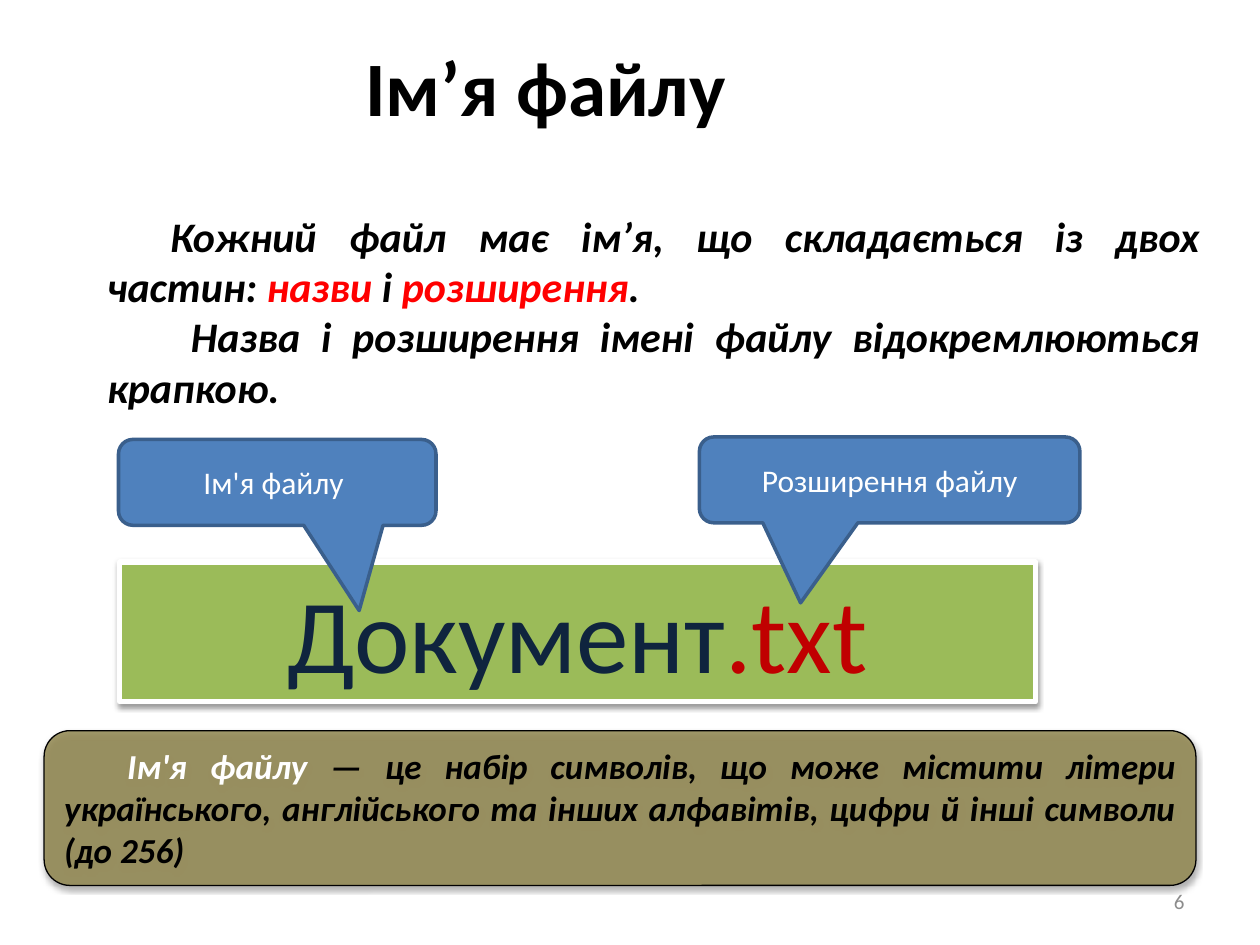
from typing import NamedTuple, Optional

from lxml.etree import SubElement
from pptx import Presentation
from pptx.dml.color import RGBColor
from pptx.enum.shapes import MSO_SHAPE as Preset
from pptx.enum.text import MSO_ANCHOR as Anchor, PP_ALIGN as Align
from pptx.oxml.ns import qn
from pptx.util import Cm, Pt

BLACK = RGBColor(0x00, 0x00, 0x00)
WHITE = RGBColor(0xFF, 0xFF, 0xFF)
RED = RGBColor(0xFF, 0x00, 0x00)
DARK_RED = RGBColor(0xC0, 0x00, 0x00)
NAVY = RGBColor(0x0F, 0x24, 0x3E)
GREEN = RGBColor(0x9B, 0xBB, 0x59)
BLUE = RGBColor(0x4F, 0x81, 0xBD)
BLUE_EDGE = RGBColor(0x3A, 0x5F, 0x8C)
OLIVE = RGBColor(0x94, 0x8A, 0x54)
GREY = RGBColor(0x8C, 0x8C, 0x8C)
FIRST_LINE = Cm(1.27)


class Run(NamedTuple):
    text: str
    color: RGBColor = BLACK


class Box(NamedTuple):
    left: float
    top: float
    width: float
    height: float

    def lengths(self) -> list:
        return [Cm(value) for value in self]


class Shadow(NamedTuple):
    opacity: int
    distance: float
    blur: float = 3.1


class Callout(NamedTuple):
    label: str
    box: Box
    tip: tuple


CALLOUTS = (
    Callout("Розширення файлу", Box(14.1, 8.81, 7.67, 1.73), (-0.234, 1.433, 0.167)),
    Callout("Ім'я файлу ", Box(2.39, 8.86, 6.4, 1.73), (0.258, 1.494, 0.167)),
)


def write(holder, *paragraphs: list, size: float, align=Align.CENTER, anchor=Anchor.TOP,
          bold: bool = False, italic: bool = False, indent: int = 0) -> None:
    frame = holder.text_frame
    frame.word_wrap = True
    frame.vertical_anchor = anchor
    for index, runs in enumerate(paragraphs):
        paragraph = frame.add_paragraph() if index else frame.paragraphs[0]
        paragraph.alignment = align
        if indent:
            properties = paragraph._p.get_or_add_pPr()
            properties.set("marL", "0")
            properties.set("indent", str(indent))
        for part in runs:
            run = paragraph.add_run()
            run.text = part.text
            font = run.font
            font.name, font.size = "Calibri", Pt(size)
            font.bold, font.italic = bold, italic
            font.color.rgb = part.color


def add_panel(slide, preset, box: Box, fill: RGBColor, edge: RGBColor, edge_width: float,
              shadow: Optional[Shadow] = None, opacity: int = 100):
    panel = slide.shapes.add_shape(preset, *box.lengths())
    panel.fill.solid()
    panel.fill.fore_color.rgb = fill
    panel.line.color.rgb = edge
    panel.line.width = Pt(edge_width)
    panel.shadow.inherit = False
    properties = panel._element.spPr
    if opacity < 100:
        color = properties.find(qn("a:solidFill")).find(qn("a:srgbClr"))
        SubElement(color, qn("a:alpha"), val=str(opacity * 1000))
    if shadow:
        outer = SubElement(properties.find(qn("a:effectLst")), qn("a:outerShdw"),
                           blurRad=str(Pt(shadow.blur)), dist=str(Pt(shadow.distance)),
                           dir="5400000", rotWithShape="0")
        color = SubElement(outer, qn("a:srgbClr"), val=str(BLACK))
        SubElement(color, qn("a:alpha"), val=str(shadow.opacity * 1000))
    return panel


def add_callout(slide, callout: Callout) -> None:
    bubble = add_panel(slide, Preset.ROUNDED_RECTANGULAR_CALLOUT, callout.box, BLUE, BLUE_EDGE, 2)
    for index, value in enumerate(callout.tip):
        bubble.adjustments[index] = value
    write(bubble, [Run(callout.label, WHITE)], size=18, anchor=Anchor.MIDDLE)


def main() -> None:
    """Build the slide about the parts of a file name."""
    deck = Presentation()
    deck.slide_width, deck.slide_height = Cm(25.4), Cm(19.05)
    slide = deck.slides.add_slide(deck.slide_layouts[6])
    add_textbox = slide.shapes.add_textbox

    title = add_textbox(*Box(1.12, 0.53, 20.12, 2.39).lengths())
    write(title, [Run("Ім’я файлу ")], size=44, bold=True, anchor=Anchor.MIDDLE)

    rules = add_textbox(*Box(1.91, 4.11, 22.53, 4.37).lengths())
    write(rules,
          [Run("Кожний файл має ім’я, що складається із двох частин: "), Run("назви", RED),
           Run(" і "), Run("розширення", RED), Run(".")],
          [Run(" Назва і розширення імені файлу відокремлюються крапкою.")],
          size=24, bold=True, italic=True, align=Align.JUSTIFY, indent=FIRST_LINE)

    example = add_panel(slide, Preset.RECTANGLE, Box(2.41, 11.33, 18.47, 2.82),
                        GREEN, WHITE, 3, Shadow(38, 1.6))
    write(example, [Run("Документ", NAVY), Run(".txt", DARK_RED)], size=60)

    for callout in CALLOUTS:
        add_callout(slide, callout)

    definition = add_panel(slide, Preset.ROUNDED_RECTANGLE, Box(0.89, 14.73, 23.22, 3.12),
                           OLIVE, BLACK, 0.75, Shadow(35, 1.8), opacity=87)
    write(definition,
          [Run("Ім'я файлу ", WHITE),
           Run("— це набір символів, що може містити літери українського, англійського "
               "та інших алфавітів, цифри й інші символи (до 256)")],
          size=20, bold=True, italic=True, align=Align.JUSTIFY, indent=FIRST_LINE)

    page_number = add_textbox(*Box(18.21, 17.65, 5.92, 1.02).lengths())
    write(page_number, [Run("6", GREY)], size=12, align=Align.RIGHT, anchor=Anchor.MIDDLE)

    deck.save("out.pptx")


if __name__ == "__main__":
    main()
